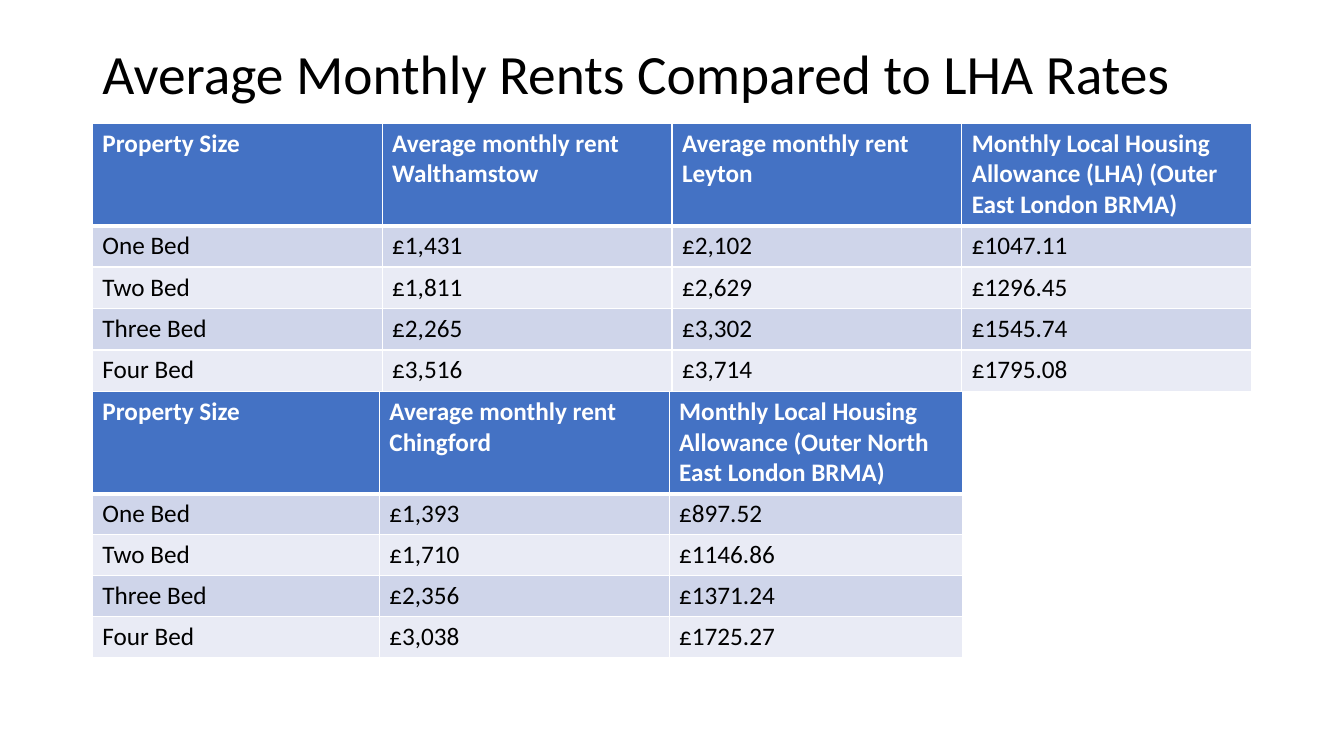
from lxml.etree import SubElement as Sub
from pptx import Presentation
from pptx.dml.color import RGBColor
from pptx.enum.text import MSO_ANCHOR as Anchor
from pptx.oxml.ns import qn
from pptx.util import Pt

BLACK = RGBColor(0, 0, 0)
WHITE = RGBColor(255, 255, 255)
BLUE = RGBColor(0x44, 0x72, 0xC4)
DARK = RGBColor(0xCF, 0xD5, 0xEA)
LIGHT = RGBColor(0xE9, 0xEB, 0xF5)
FONT = "Calibri"
LEFT = 66

NORTH = [
    ("Property Size", "Average monthly rent Walthamstow", "Average monthly rent Leyton",
     "Monthly Local Housing Allowance (LHA) (Outer East London BRMA)"),
    ("One Bed", "£1,431", "£2,102", "£1047.11"),
    ("Two Bed", "£1,811", "£2,629", "£1296.45"),
    ("Three Bed", "£2,265", "£3,302", "£1545.74"),
    ("Four Bed", "£3,516", "£3,714", "£1795.08"),
]
OUTER = [
    ("Property Size", "Average monthly rent Chingford",
     "Monthly Local Housing Allowance (Outer North East London BRMA)"),
    ("One Bed", "£1,393", "£897.52"),
    ("Two Bed", "£1,710", "£1146.86"),
    ("Three Bed", "£2,356", "£1371.24"),
    ("Four Bed", "£3,038", "£1725.27"),
]


def add_run(para, text, size, color, bold=False):
    run = para.add_run()
    run.text = text
    font = run.font
    font.name, font.size, font.bold = FONT, Pt(size), bold
    font.color.rgb = color


def add_edges(cell, row):
    props = cell._tc.get_or_add_tcPr()
    wide = {0: "lnB", 1: "lnT"}.get(row)
    for side in ("lnL", "lnR", "lnT", "lnB"):
        width = Pt(3 if side == wide else 1)
        line = Sub(props, qn(f"a:{side}"), w=str(width))
        fill = Sub(line, qn("a:solidFill"))
        Sub(fill, qn("a:srgbClr"), val=str(WHITE))


def add_title(slide, text, left, top, width, height):
    title = slide.shapes.title
    title.left, title.top = Pt(left), Pt(top)
    title.width, title.height = Pt(width), Pt(height)
    frame = title.text_frame
    frame.word_wrap = True
    frame.vertical_anchor = Anchor.MIDDLE
    para = frame.paragraphs[0]
    para.alignment = 1
    para.line_spacing = 0.9
    add_run(para, text, 39.6, BLACK)


def add_rents(slide, data, left, top, widths, head, height):
    full = head + height * (len(data) - 1)
    frame = slide.shapes.add_table(
        len(data), len(widths), Pt(left), Pt(top), Pt(sum(widths)), Pt(full))
    table = frame.table
    for col, width in zip(table.columns, widths):
        col.width = Pt(width)
    for i, texts in enumerate(data):
        table.rows[i].height = Pt(height if i else head)
        shade = (DARK if i % 2 else LIGHT) if i else BLUE
        for j, text in enumerate(texts):
            cell = table.cell(i, j)
            add_edges(cell, i)
            cell.fill.solid()
            cell.fill.fore_color.rgb = shade
            para = cell.text_frame.paragraphs[0]
            add_run(para, text, 18, BLACK if i else WHITE, not i)


def main():
    deck = Presentation()
    deck.slide_width, deck.slide_height = Pt(960), Pt(540)
    slide = deck.slides.add_slide(deck.slide_layouts[5])
    add_title(slide, "Average Monthly Rents Compared to LHA Rates", LEFT, 22, 822, 66)
    add_rents(slide, NORTH, LEFT, 88, [207] * 4, 73.2, 29.6)
    add_rents(slide, OUTER, LEFT, 279.5, [205, 207, 209.5], 73.2, 29.2)
    deck.save("out.pptx")


if __name__ == "__main__":
    main()
